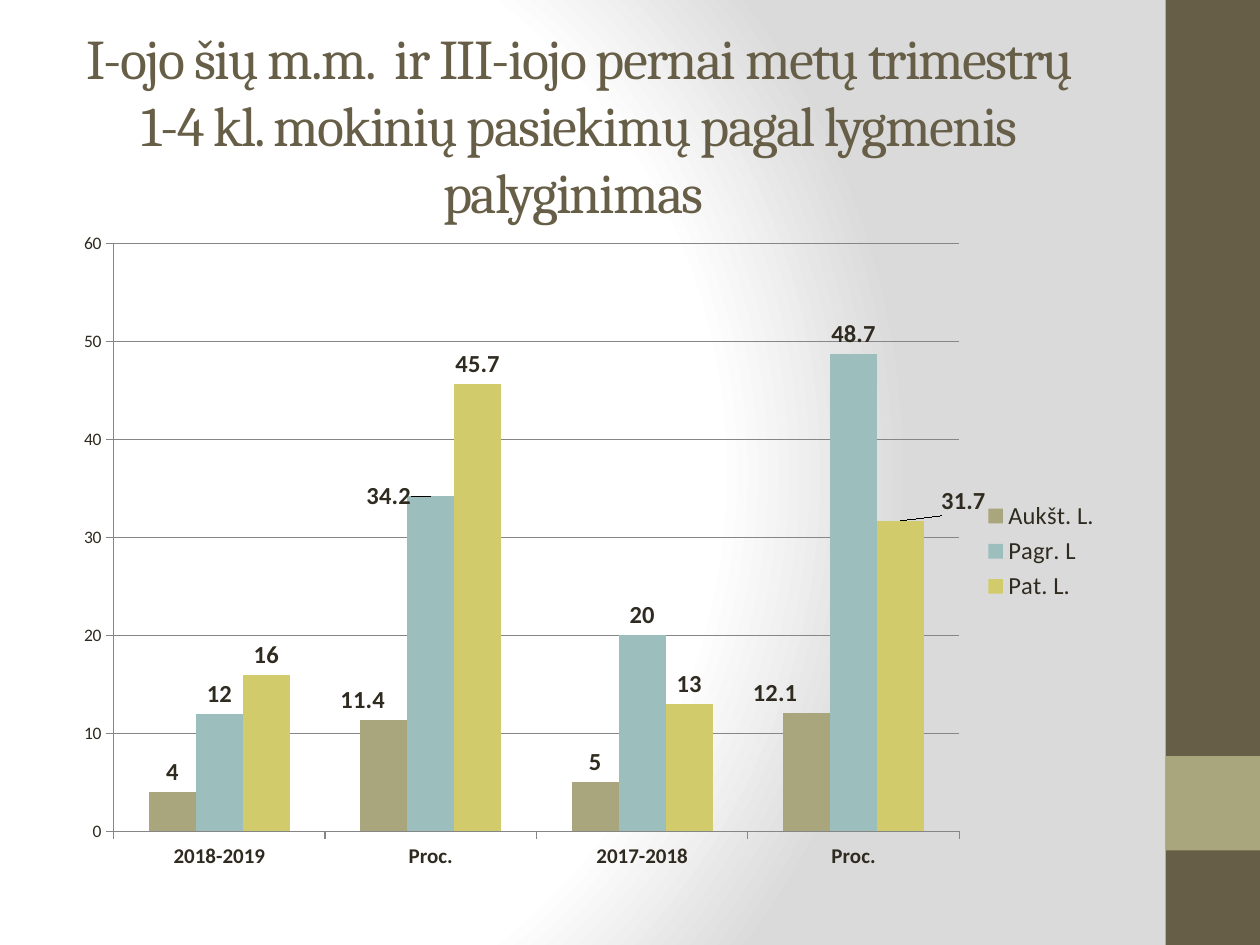
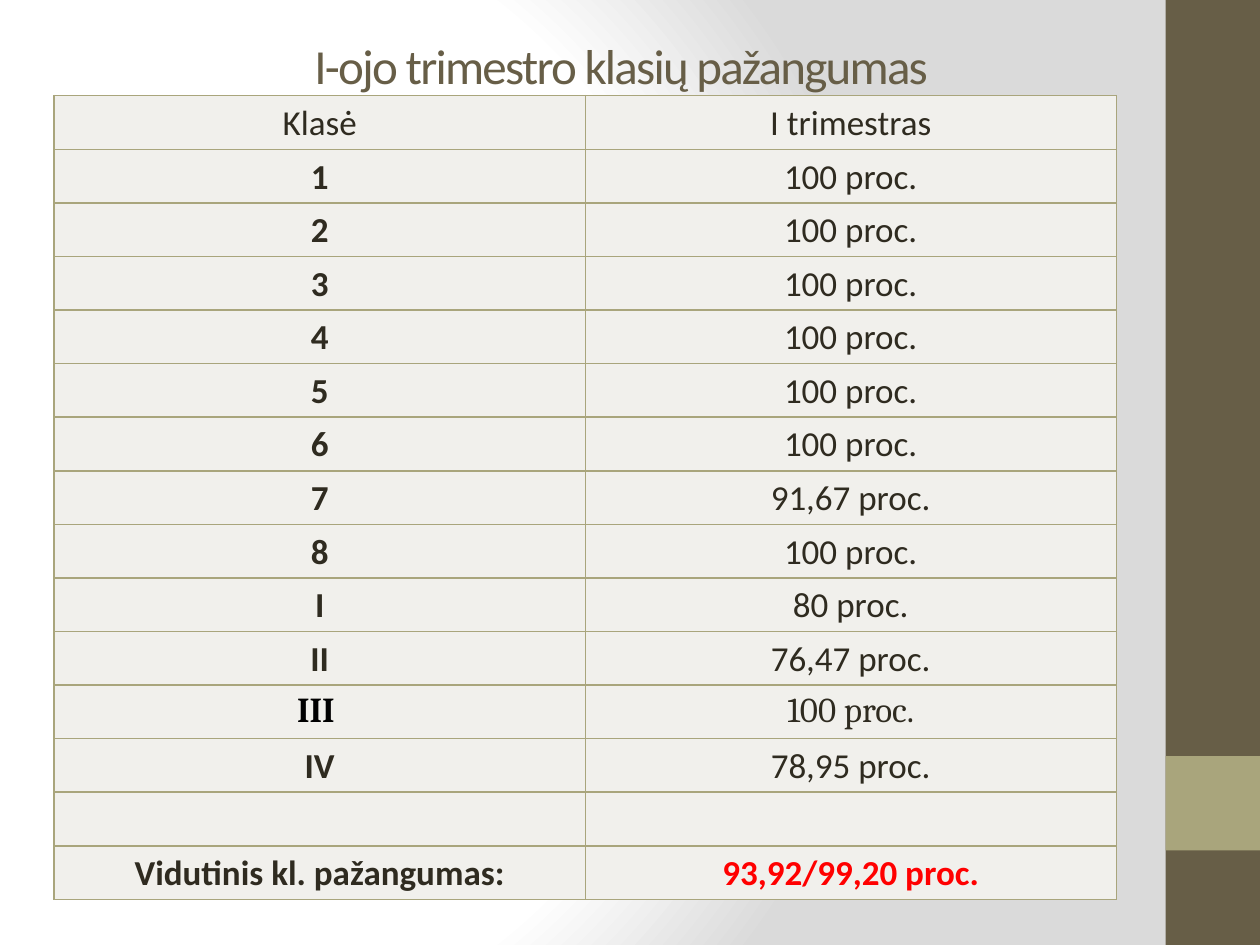
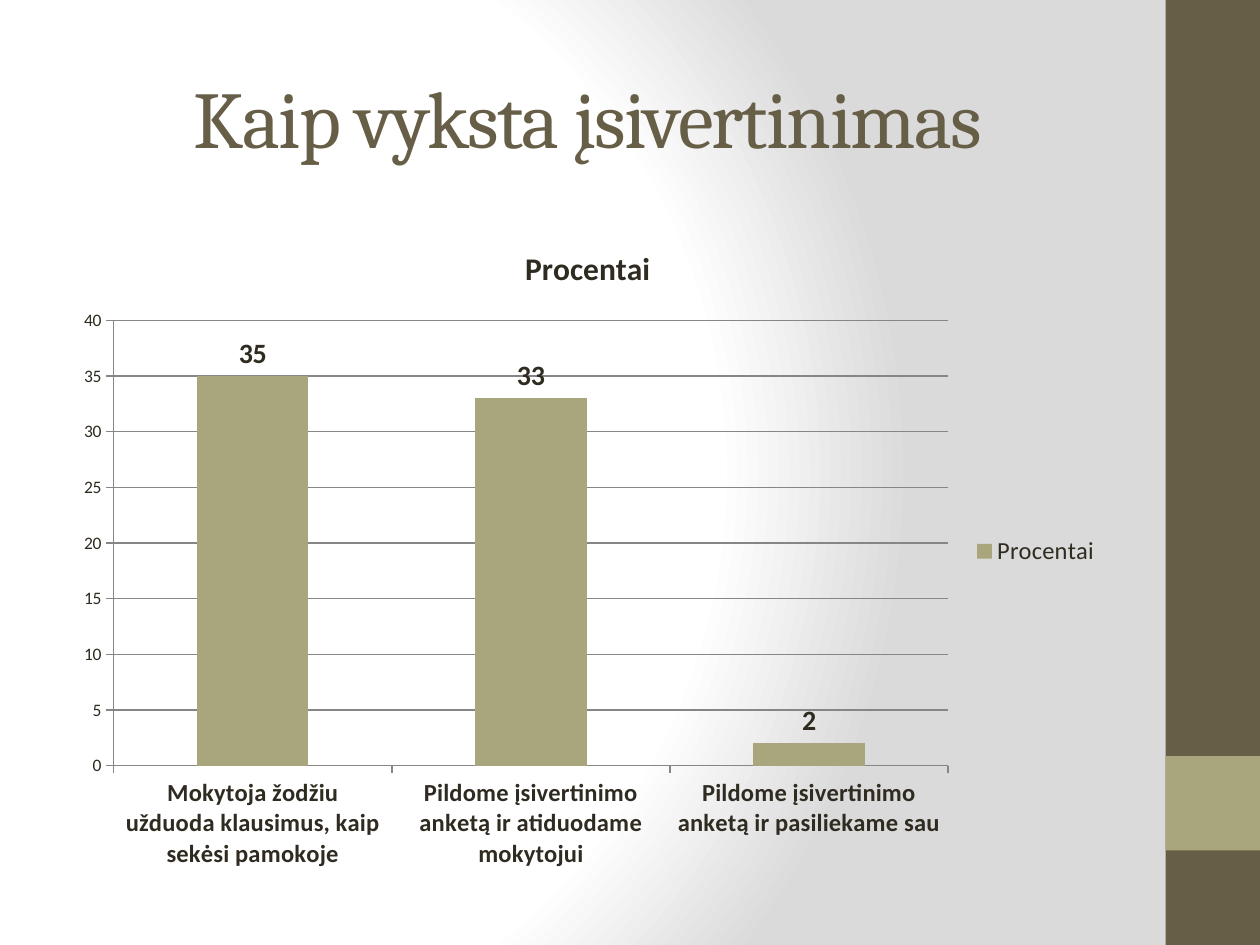
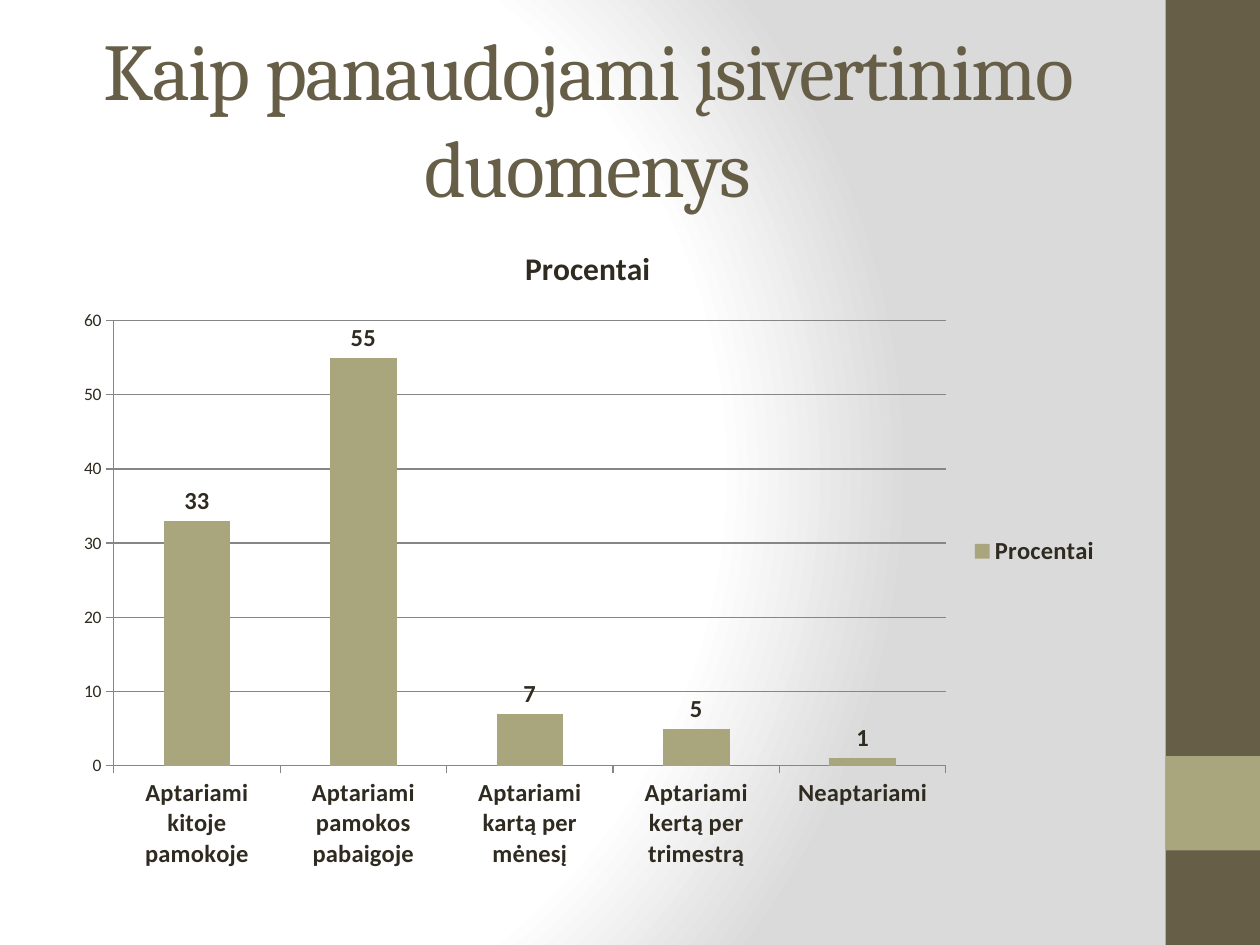
from dataclasses import dataclass

from pptx import Presentation
from pptx.chart.data import CategoryChartData
from pptx.dml.color import RGBColor
from pptx.enum import chart as charts, shapes, text
from pptx.oxml import parse_xml
from pptx.oxml.ns import nsdecls
from pptx.util import Inches, Pt


@dataclass(frozen=True)
class Theme:
    brown: str = "675E47"
    olive: str = "A9A57C"
    teal: str = "9CBEBD"
    yellow: str = "D2CB6C"
    ink: str = "2F2B20"
    black: str = "000000"
    red: str = "FF0000"
    grid: str = "868686"
    cell: str = "F1F0EC"
    white: str = "FFFFFF"
    shade: str = "DADADA"
    heading: str = "Cambria"
    body: str = "Calibri"
    title_size: int = 46
    long_title_size: int = 32
    table_title_size: int = 28
    table_size: int = 20
    chart_title_size: int = 18
    large_size: int = 16
    label_size: int = 14
    small_size: int = 12
    axis_size: int = 10


THEME = Theme()
TITLE_BOX = (0.5, 0.3, 8.33, 1.25)
CHART_BOX = (0.5, 1.75, 8.33, 5.25)


def rgb(color):
    return RGBColor.from_string(color)


def inches(box):
    return [Inches(length) for length in box]


def set_font(font, size, color=THEME.ink, name=THEME.body, bold=False):
    font.size, font.name, font.bold = Pt(size), name, bold
    font.color.rgb = rgb(color)


class Deck:
    """Holds the theme, the presentation and the slide being filled."""

    def __init__(self, theme):
        self.theme = theme
        self.prs = Presentation()
        self.prs.slide_width, self.prs.slide_height = Inches(10), Inches(7.5)
        self.slide = None

    def new_slide(self):
        self.slide = self.prs.slides.add_slide(self.prs.slide_layouts[6])
        self.background()
        self.band(0, 7.5, self.theme.brown)
        self.band(6, 0.75, self.theme.olive)

    def background(self):
        """Circular gradient from white to grey."""
        self.slide.background.fill.gradient()
        properties = self.slide.element.xpath(".//p:bgPr")[0]
        stops = "".join(
            f'<a:gs pos="{percent * 1000}"><a:srgbClr val="{color}"/></a:gs>'
            for percent, color in ((0, self.theme.white), (75, self.theme.white),
                                   (100, self.theme.shade)))
        properties.replace(properties[0], parse_xml(
            f'<a:gradFill {nsdecls("a")} rotWithShape="1"><a:gsLst>{stops}</a:gsLst>'
            '<a:path path="circle">'
            '<a:fillToRect l="20000" t="50000" r="100000" b="50000"/>'
            '</a:path></a:gradFill>'))

    def band(self, top, height, color):
        band = self.slide.shapes.add_shape(
            shapes.MSO_SHAPE.RECTANGLE, *inches((9.25, top, 0.75, height)))
        band.shadow.inherit = False
        band.fill.solid()
        band.fill.fore_color.rgb = rgb(color)
        band.line.fill.background()

    def title(self, wording, box=TITLE_BOX, size=THEME.title_size, font=THEME.heading):
        frame = self.slide.shapes.add_textbox(*inches(box)).text_frame
        frame.word_wrap = True
        frame.vertical_anchor = text.MSO_ANCHOR.MIDDLE
        frame.text = wording
        paragraph = frame.paragraphs[0]
        paragraph.alignment = text.PP_ALIGN.CENTER
        run = paragraph.runs[0]
        set_font(run.font, size, self.theme.brown, font)
        run.font._element.set("spc", "-100")

    def column_chart(self, categories, series, category_size=THEME.label_size,
                     value_size=THEME.label_size, heading=None, bold_legend=False):
        """Draw clustered columns; series holds (name, values, color)."""
        theme = self.theme
        data = CategoryChartData()
        data.categories = categories
        for name, values, _ in series:
            data.add_series(name, values)
        chart = self.slide.shapes.add_chart(
            charts.XL_CHART_TYPE.COLUMN_CLUSTERED, *inches(CHART_BOX), data).chart
        set_font(chart.font, theme.axis_size)

        chart.has_title = heading is not None
        if heading:
            frame = chart.chart_title.text_frame
            frame.text = heading
            set_font(frame.paragraphs[0].runs[0].font, theme.chart_title_size, bold=True)

        chart.has_legend = True
        chart.legend.position = charts.XL_LEGEND_POSITION.RIGHT
        chart.legend.include_in_layout = False
        set_font(chart.legend.font, theme.label_size, bold=bold_legend)

        for axis in (chart.category_axis, chart.value_axis):
            axis.major_tick_mark = charts.XL_TICK_MARK.OUTSIDE
            axis.format.line.color.rgb = rgb(theme.grid)
        set_font(chart.category_axis.tick_labels.font, category_size, bold=True)
        chart.value_axis.has_major_gridlines = True
        chart.value_axis.major_gridlines.format.line.color.rgb = rgb(theme.grid)

        plot = chart.plots[0]
        plot.gap_width = 150
        plot.vary_by_categories = False
        for columns, (_, _, color) in zip(plot.series, series):
            columns.format.fill.solid()
            columns.format.fill.fore_color.rgb = rgb(color)
            labels = columns.data_labels
            labels.show_value = True
            labels.position = charts.XL_LABEL_POSITION.OUTSIDE_END
            set_font(labels.font, value_size, bold=True)
        return chart

    def move_label(self, chart, series, point, x, y):
        """Shift one value label by fractions of the chart's size."""
        label = chart.plots[0].series[series].points[point].data_label
        label.position = charts.XL_LABEL_POSITION.OUTSIDE_END
        set_font(label.font, self.theme.label_size, bold=True)
        element = chart.element.xpath(
            f'.//c:ser[{series + 1}]//c:dLbl[c:idx/@val="{point}"]')[0]
        element.insert(1, parse_xml(
            f'<c:layout {nsdecls("c")}><c:manualLayout>'
            f'<c:x val="{x}"/><c:y val="{y}"/></c:manualLayout></c:layout>'))

    def table(self, rows, box):
        grid = self.slide.shapes.add_table(len(rows), len(rows[0]), *inches(box)).table
        grid.first_row = grid.horz_banding = False
        for row, wordings in enumerate(rows):
            for column, wording in enumerate(wordings):
                self.cell(grid.cell(row, column), wording)
        return grid

    def cell(self, cell, wording):
        cell.margin_left = cell.margin_right = Inches(0.07)
        cell.margin_top = cell.margin_bottom = 0
        properties = cell._tc.get_or_add_tcPr()
        for side in "LRTB":
            properties.append(parse_xml(
                f'<a:ln{side} {nsdecls("a")} w="12700"><a:solidFill>'
                f'<a:srgbClr val="{self.theme.olive}"/></a:solidFill></a:ln{side}>'))
        cell.fill.solid()
        cell.fill.fore_color.rgb = rgb(self.theme.cell)
        if wording:
            self.cell_font(cell, wording)

    def cell_font(self, cell, wording, **style):
        cell.text_frame.text = wording
        paragraph = cell.text_frame.paragraphs[0]
        paragraph.alignment = text.PP_ALIGN.CENTER
        paragraph.line_spacing = 1.15
        set_font(paragraph.runs[0].font, self.theme.table_size, **style)


def level_comparison(deck):
    deck.new_slide()
    deck.title("I-ojo šių m.m.  ir III-iojo pernai metų trimestrų 1-4 kl. mokinių "
               "pasiekimų pagal lygmenis palyginimas ",
               (0.43, 0.36, 8.33, 1.25), THEME.long_title_size)
    chart = deck.column_chart(
        ["2018-2019", "Proc.", "2017-2018", "Proc."],
        [("Aukšt. L.", (4, 11.4, 5, 12.1), THEME.olive),
         ("Pagr. L", (12, 34.2, 20, 48.7), THEME.teal),
         ("Pat. L.", (16, 45.7, 13, 31.7), THEME.yellow)],
        category_size=THEME.small_size)
    for series, point, x, y in ((0, 1, -0.02, 0), (0, 3, -0.03, 0),
                                (1, 1, -0.04, 0.03), (2, 3, 0.06, 0)):
        deck.move_label(chart, series, point, x, y)


def class_progress(deck):
    deck.new_slide()
    deck.title("I-ojo trimestro klasių pažangumas", (0.43, 0.21, 9, 0.61),
               THEME.table_title_size, THEME.body)
    progress = {"1": "100", "2": "100", "3": "100", "4": "100", "5": "100",
                "6": "100", "7": "91,67", "8": "100", "I": "80", "II": "76,47",
                "III ": "100", "IV": "78,95"}
    rows = [("Klasė", "I trimestras"),
            *((name, f"{percent} proc.") for name, percent in progress.items()),
            ("", ""),
            ("Vidutinis kl. pažangumas:", "93,92/99,20 proc.")]
    grid = deck.table(rows, (0.43, 0.76, 8.43, 6.38))

    for row, (name, percent) in enumerate(rows[1:], start=1):
        if not name:
            continue
        third = name == "III "
        font = THEME.heading if third else THEME.body
        deck.cell_font(grid.cell(row, 0), name, name=font, bold=True,
                       color=THEME.black if third else THEME.ink)
        deck.cell_font(grid.cell(row, 1), percent, name=font)
    deck.cell_font(grid.cell(len(rows) - 1, 1), rows[-1][1],
                   color=THEME.red, bold=True)


def self_assessment(deck, wording, answers, **style):
    """One survey question, with the share of each answer."""
    deck.new_slide()
    deck.title(wording)
    deck.column_chart(list(answers), [("Procentai", answers.values(), THEME.olive)],
                      heading="Procentai", **style)


def main():
    deck = Deck(THEME)
    level_comparison(deck)
    class_progress(deck)
    self_assessment(deck, "Kaip vyksta įsivertinimas", {
        "Mokytoja žodžiu užduoda klausimus, kaip sekėsi pamokoje": 35,
        "Pildome įsivertinimo anketą ir atiduodame mokytojui": 33,
        "Pildome įsivertinimo anketą ir pasiliekame sau": 2,
    }, value_size=THEME.large_size)
    self_assessment(deck, "Kaip panaudojami įsivertinimo duomenys", {
        "Aptariami kitoje pamokoje": 33,
        "Aptariami pamokos pabaigoje": 55,
        "Aptariami kartą per mėnesį": 7,
        "Aptariami kertą per trimestrą": 5,
        "Neaptariami": 1,
    }, bold_legend=True)
    deck.prs.save("out.pptx")


if __name__ == "__main__":
    main()
